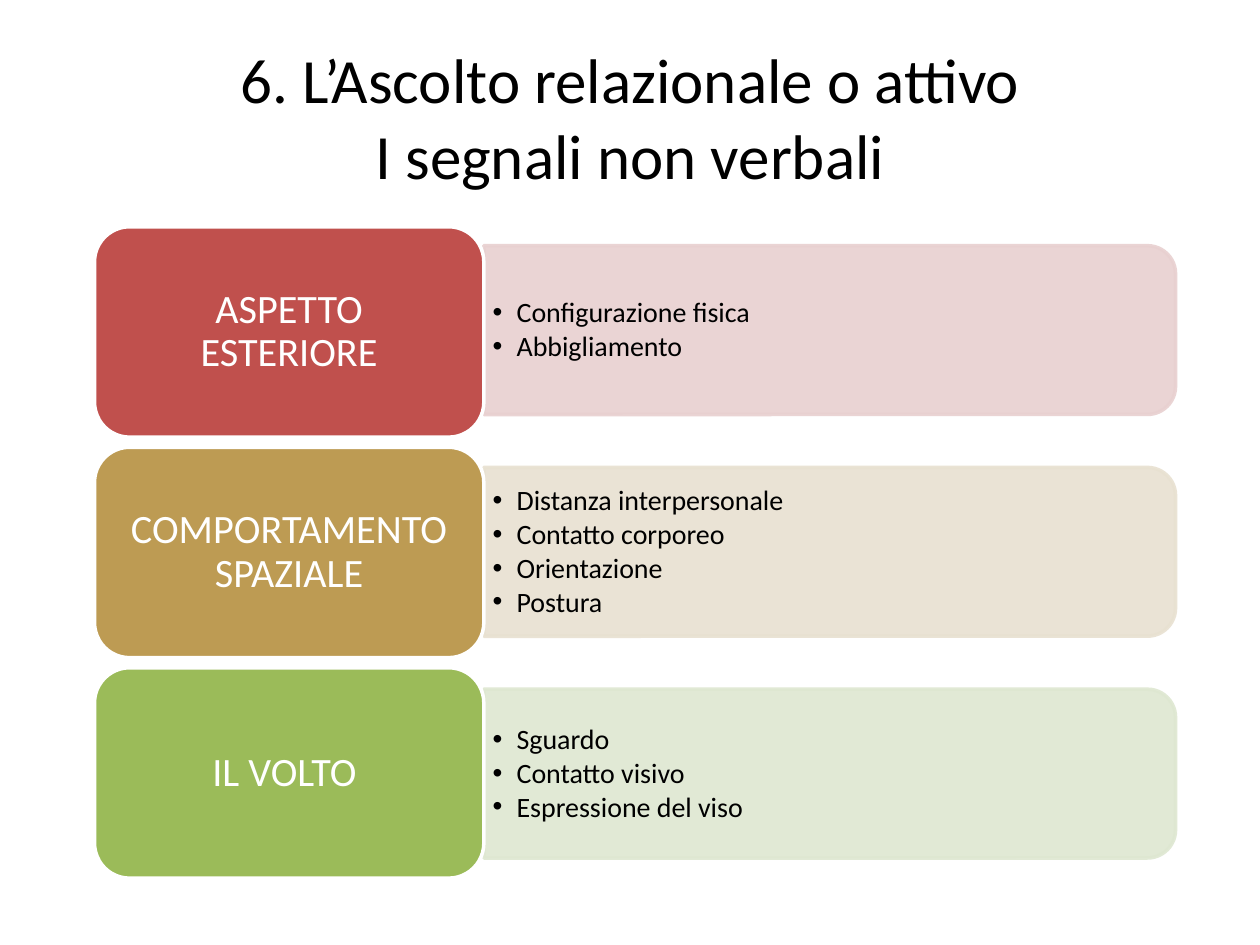
import dataclasses

import lxml.etree
import pptx
import pptx.dml.color
import pptx.enum.shapes
import pptx.enum.text
import pptx.oxml.ns
import pptx.util

Inches = pptx.util.Inches
Pt = pptx.util.Pt
ANCHOR = pptx.enum.text.MSO_ANCHOR
ALIGN = pptx.enum.text.PP_ALIGN
SHAPE = pptx.enum.shapes.MSO_SHAPE

TITLE = "6. L’Ascolto relazionale o attivo\vI segnali non verbali"
SIGNALS = [
    ("ASPETTO ESTERIORE", "C0504D", "E8D0D0",
     ["Configurazione fisica", "Abbigliamento"]),
    ("COMPORTAMENTO SPAZIALE", "BD9B53", "E8E1D1",
     ["Distanza interpersonale", "Contatto corporeo", "Orientazione", "Postura"]),
    ("IL VOLTO ", "9BBB59", "DEE7D1",
     ["Sguardo", "Contatto visivo", "Espressione del viso"]),
]


@dataclasses.dataclass(frozen=True)
class Theme:
    font: str = "Calibri"
    text: str = "000000"
    light: str = "FFFFFF"
    title_size: int = 36
    label_size: int = 23
    list_size: int = 16
    outline: int = 2
    panel_opacity: int = 90


def color(value):
    return pptx.dml.color.RGBColor.from_string(value)


def set_attributes(target, values):
    for name, value in values.items():
        setattr(target, name, value)


def place(shape, left, top, width, height):
    box = zip(("left", "top", "width", "height"), (left, top, width, height))
    set_attributes(shape, {name: Inches(length) for name, length in box})


def add_element(parent, tag, **attributes):
    return lxml.etree.SubElement(parent, pptx.oxml.ns.qn(tag), **attributes)


class SlideBuilder:
    def __init__(self, slide, theme):
        self.slide = slide
        self.theme = theme

    def format_text(self, shape, size, text_color, margins, paragraph_format):
        frame = shape.text_frame
        horizontal, vertical = (Inches(margin) for margin in margins)
        set_attributes(frame, {
            "word_wrap": True,
            "auto_size": pptx.enum.text.MSO_AUTO_SIZE.NONE,
            "vertical_anchor": ANCHOR.MIDDLE,
            "margin_left": horizontal, "margin_right": horizontal,
            "margin_top": vertical, "margin_bottom": vertical,
        })
        for paragraph in frame.paragraphs:
            set_attributes(paragraph, paragraph_format)
            for run in paragraph.runs:
                set_attributes(run.font, {
                    "name": self.theme.font, "size": Pt(size), "bold": False})
                run.font.color.rgb = color(text_color)

    def title(self, text, box):
        shape = self.slide.shapes.title
        place(shape, *box)
        shape.text_frame.text = text
        self.format_text(shape, self.theme.title_size, self.theme.text,
                         (0.1, 0.05), {"alignment": ALIGN.CENTER})

    def rounded(self, kind, box, fill, line):
        shape = self.slide.shapes.add_shape(kind, *map(Inches, box))
        shape.shadow.inherit = False
        shape.fill.solid()
        shape.fill.fore_color.rgb = color(fill)
        shape.line.color.rgb = color(line)
        shape.line.width = Pt(self.theme.outline)
        return shape

    def panel(self, box, fill):
        """Draw a translucent panel rounded on its right side only."""
        left, top, width, height = box
        inset = (width - height) / 2
        shape = self.rounded(SHAPE.ROUND_2_SAME_RECTANGLE,
                             (left + inset, top - inset, height, width), fill, fill)
        shape.rotation = 90
        properties = shape.element.spPr
        for rgb in properties.iter(pptx.oxml.ns.qn("a:srgbClr")):
            add_element(rgb, "a:alpha", val=str(self.theme.panel_opacity * 1000))

    def label(self, text, box, fill):
        shape = self.rounded(SHAPE.ROUNDED_RECTANGLE, box, fill, self.theme.light)
        shape.text_frame.text = text
        self.format_text(shape, self.theme.label_size, self.theme.light,
                         (0.18, 0.13),
                         {"alignment": ALIGN.CENTER, "line_spacing": 0.9})

    def bullets(self, placeholder, items, box):
        place(placeholder, *box)
        # Layout placeholders come first in the tree; raise this one over its panel.
        placeholder.element.getparent().append(placeholder.element)
        placeholder.text_frame.text = "\n".join(items)
        self.format_text(placeholder, self.theme.list_size, self.theme.text,
                         (0.07, 0.03),
                         {"alignment": ALIGN.LEFT, "line_spacing": 0.9,
                          "space_before": Pt(0), "space_after": Pt(2)})
        for paragraph in placeholder.text_frame.paragraphs:
            properties = paragraph._p.get_or_add_pPr()
            indent = Inches(0.19)
            properties.set("marL", str(indent))
            properties.set("indent", str(-indent))
            add_element(properties, "a:buFont", typeface="Arial")
            add_element(properties, "a:buChar", char="•")


def main():
    presentation = pptx.Presentation()
    presentation.slide_width = Inches(10)
    presentation.slide_height = Inches(7.5)
    comparison_layout = presentation.slide_layouts[4]
    slide = presentation.slides.add_slide(comparison_layout)
    builder = SlideBuilder(slide, Theme())
    builder.title(TITLE, (0.5, 0.3, 9, 1.25))

    title, *lists = list(slide.placeholders)
    for unused in lists[len(SIGNALS):]:
        unused.element.getparent().remove(unused.element)

    label_left, label_width, label_height = 0.75, 3.09, 1.67
    panel_left = label_left + label_width
    for row, (signal, placeholder) in enumerate(zip(SIGNALS, lists)):
        name, label_fill, panel_fill, items = signal
        center = 2.62 + 1.76 * row
        builder.panel((panel_left, center - 0.67, 5.49, 1.34), panel_fill)
        builder.bullets(placeholder, items, (panel_left, center - 0.6, 5.43, 1.21))
        builder.label(name, (label_left, 1.8 + 1.75 * row, label_width, label_height),
                      label_fill)

    presentation.save("out.pptx")


if __name__ == "__main__":
    main()
